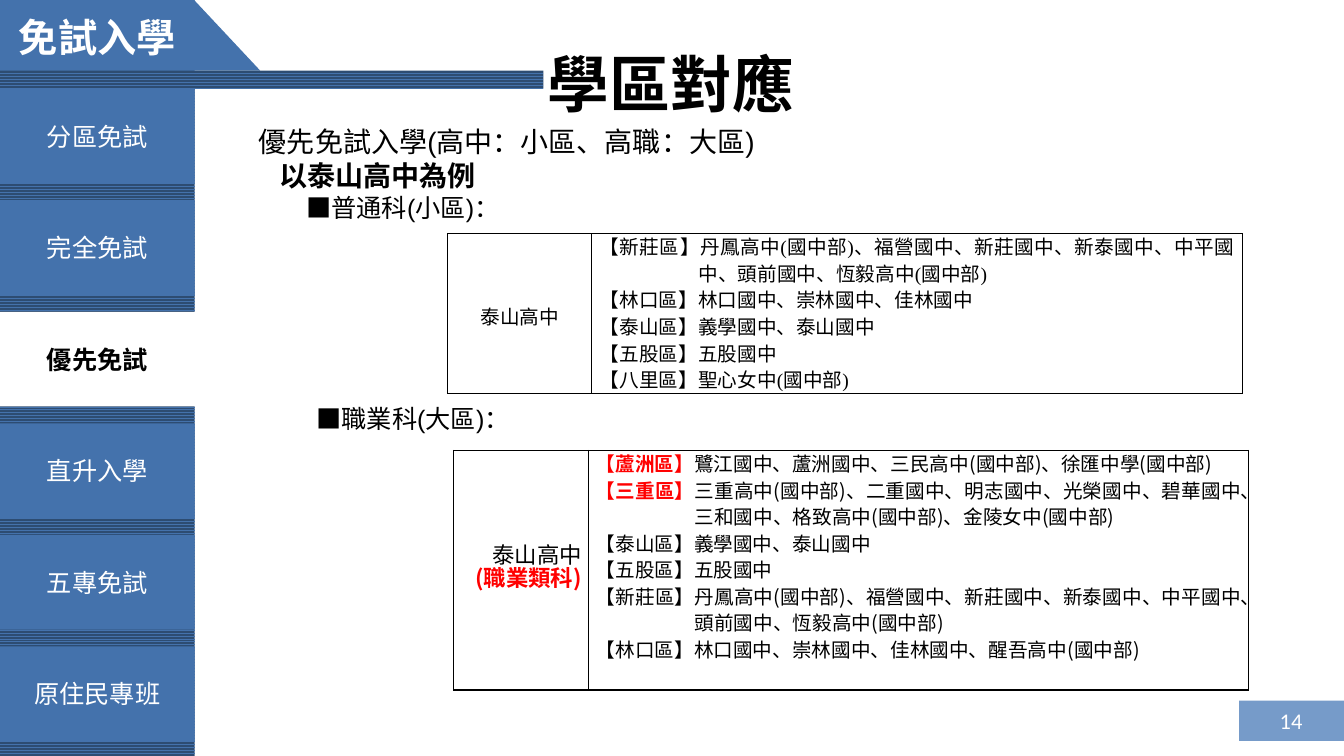
from lxml import etree
from pptx import Presentation
from pptx.dml.color import RGBColor
from pptx.enum.dml import MSO_PATTERN
from pptx.enum.shapes import MSO_SHAPE
from pptx.enum.text import MSO_ANCHOR, PP_ALIGN
from pptx.oxml.ns import qn
from pptx.util import Inches, Pt

RECT = MSO_SHAPE.RECTANGLE
PEAK = MSO_SHAPE.ISOSCELES_TRIANGLE
ZIGZAG = MSO_PATTERN.ZIG_ZAG
MID, TOP = MSO_ANCHOR.MIDDLE, MSO_ANCHOR.TOP
LEFT, CENTER = PP_ALIGN.LEFT, PP_ALIGN.CENTER
RIGHT, JUST = PP_ALIGN.RIGHT, PP_ALIGN.JUSTIFY

WIDE, HIGH = 13.33, 7.5
SIDE = 1.93
BLUE, NAVY, PALE = "4472AC", "2D4C72", "769BC9"
WHITE, BLACK, RED = "FFFFFF", "000000", "FF0000"

TABS = ["分區免試", "完全免試", "優先免試", "直升入學", "五專免試", "原住民專班"]
ACTIVE = 2

INTRO = [
    ("優先免試入學(高中：小區、高職：大區)", 20, False, 0, 0),
    ("以泰山高中為例", 20, True, 0.2, 0),
    ("■普通科(小區)：", 18, False, 0.47, 0),
    ("■職業科(大區)：", 18, False, 0.57, 129),
]

SMALL = [
    ("", "【新莊區】丹鳳高中(國中部)、福營國中、新莊國中、新泰國中、中平國中、頭前國中、恆毅高中(國中部)", 0.98),
    ("", "【林口區】林口國中、崇林國中、佳林國中", 0.83),
    ("", "【泰山區】義學國中、泰山國中", 0.83),
    ("", "【五股區】五股國中", 0.83),
    ("", "【八里區】聖心女中(國中部)", 0.83),
]

LARGE = [
    ("【蘆洲區】", "鷺江國中、蘆洲國中、三民高中(國中部)、徐匯中學(國中部)", 0.83),
    ("【三重區】", "三重高中(國中部)、二重國中、明志國中、光榮國中、碧華國中、三和國中、格致高中(國中部)、金陵女中(國中部)", 0.98),
    ("", "【泰山區】義學國中、泰山國中", 0.83),
    ("", "【五股區】五股國中", 0.83),
    ("", "【新莊區】丹鳳高中(國中部)、福營國中、新莊國中、新泰國中、中平國中、頭前國中、恆毅高中(國中部)", 0.98),
    ("", "【林口區】林口國中、崇林國中、佳林國中、醒吾高中(國中部)", 0.83),
]


def paint(hue):
    return RGBColor.from_string(hue)


def style(font, size, hue, bold=False, face="Calibri"):
    font.size, font.bold, font.name = Pt(size), bold, face
    font.color.rgb = paint(hue)


def block(slide, box, hue, kind=RECT, back=None):
    shape = slide.shapes.add_shape(kind, *map(Inches, box))
    shape.shadow.inherit = False
    shape.line.fill.background()
    if back:
        shape.fill.patterned()
        shape.fill.pattern = ZIGZAG
        shape.fill.fore_color.rgb = paint(hue)
        shape.fill.back_color.rgb = paint(back)
    else:
        shape.fill.solid()
        shape.fill.fore_color.rgb = paint(hue)
    return shape


def label(slide, box, text, size, hue, bold=False, wrap=True, pad=True):
    frame = slide.shapes.add_textbox(*map(Inches, box)).text_frame
    frame.word_wrap = wrap
    frame.vertical_anchor = MID
    if not pad:
        frame.margin_left = frame.margin_right = 0
        frame.margin_top = frame.margin_bottom = 0
    para = frame.paragraphs[0]
    para.text, para.alignment = text, CENTER
    style(para.font, size, hue, bold)


def header(slide, x, y, w, h):
    block(slide, (x + 1.27, y, 1.31, 0.7), BLUE, PEAK)
    head = block(slide, (x, y, SIDE, 0.74), BLUE)
    frame = head.text_frame
    frame.vertical_anchor = MID
    para = frame.paragraphs[0]
    para.text, para.alignment = "免試入學", CENTER
    style(para.font, 28, WHITE, True)
    block(slide, (x, y + h - 0.18, w, 0.18), BLUE, back=NAVY)


def menu(slide, x, y, w, h):
    block(slide, (x, y, w, h), BLUE, back=NAVY)
    step = h / len(TABS)
    for i, name in enumerate(TABS):
        on = i == ACTIVE
        top = y + 0.02 + i * step
        block(slide, (x, top, w + 0.18 * on, 0.94), WHITE if on else BLUE)
        wide = 0.25 * len(name) + 0.21
        spot = (x + (w - wide) / 2, top + 0.27, wide, 0.4)
        label(slide, spot, name, 18, BLACK if on else WHITE, on, False)


def intro(slide, x, y, w, h):
    frame = slide.shapes.add_textbox(*map(Inches, (x, y, w, h))).text_frame
    frame.word_wrap = True
    for i, (text, size, bold, dent, gap) in enumerate(INTRO):
        para = frame.add_paragraph() if i else frame.paragraphs[0]
        para.text, para.space_before = text, Pt(gap)
        para._p.get_or_add_pPr().set("marL", str(Inches(dent)))
        style(para.font, size, BLACK, bold, "Arial")


def edge(cell):
    props = cell._tc.get_or_add_tcPr()
    for side in ("lnL", "lnR", "lnT", "lnB"):
        line = etree.SubElement(props, qn("a:" + side), w=str(Pt(1)))
        fill = etree.SubElement(line, qn("a:solidFill"))
        etree.SubElement(fill, qn("a:srgbClr"), val=BLACK)


def setup(cell, anchor, pad):
    edge(cell)
    cell.fill.background()
    cell.vertical_anchor = anchor
    cell.margin_left = cell.margin_right = Inches(pad)
    cell.margin_top = cell.margin_bottom = 0


def zones(slide, x, y, w, h, first, names, rows, face, size, lead, align, pad):
    spot = map(Inches, (x, y, w, h))
    table = slide.shapes.add_table(1, 2, *spot).table
    table.first_row = table.horz_banding = False
    table.columns[0].width = Inches(first)
    table.columns[1].width = Inches(w - first)
    school, areas = table.cell(0, 0), table.cell(0, 1)
    setup(school, MID, pad)
    setup(areas, TOP, pad)
    for i, (name, hue) in enumerate(names):
        frame = school.text_frame
        para = frame.add_paragraph() if i else frame.paragraphs[0]
        para.text, para.alignment, para.line_spacing = name, align, Pt(lead)
        style(para.font, size, hue, hue == RED, face)
    for i, (mark, text, dent) in enumerate(rows):
        frame = areas.text_frame
        para = frame.add_paragraph() if i else frame.paragraphs[0]
        para.alignment, para.line_spacing = JUST, Pt(19)
        props = para._p.get_or_add_pPr()
        props.set("marL", str(Inches(dent)))
        props.set("indent", str(Inches(-dent)))
        for part, hue in ((mark, RED), (text, BLACK)):
            if part:
                run = para.add_run()
                run.text = part
                style(run.font, 14, hue, hue == RED, face)


def number(slide, x, y, w, h):
    block(slide, (x, y, w, h), PALE)
    label(slide, (x + 0.27, y, 0.49, h), "14", 16, WHITE)


def main():
    deck = Presentation()
    deck.slide_width, deck.slide_height = Inches(WIDE), Inches(HIGH)
    slide = deck.slides.add_slide(deck.slide_layouts[6])
    menu(slide, 0, 0.86, SIDE, HIGH - 0.86)
    header(slide, 0, 0, 5.39, 0.88)
    number(slide, WIDE - 1.04, 6.95, 1.04, 0.4)
    label(slide, (3.08, 0.45, 7.15, 0.74), "學區對應", 44, BLACK, True, pad=False)
    intro(slide, 2.47, 1.19, 8.67, 3.2)
    zones(slide, 4.44, 2.32, 7.88, 1.58, 1.43, [("泰山高中", BLACK)],
          SMALL, "Times New Roman", 14, 24, CENTER, 0.08)
    zones(slide, 4.5, 4.47, 7.88, 2.28, 1.34,
          [("泰山高中", BLACK), ("(職業類科)", RED)],
          LARGE, "Noto Sans CJK SC", 16, 16, RIGHT, 0.07)
    deck.save("out.pptx")


if __name__ == "__main__":
    main()
